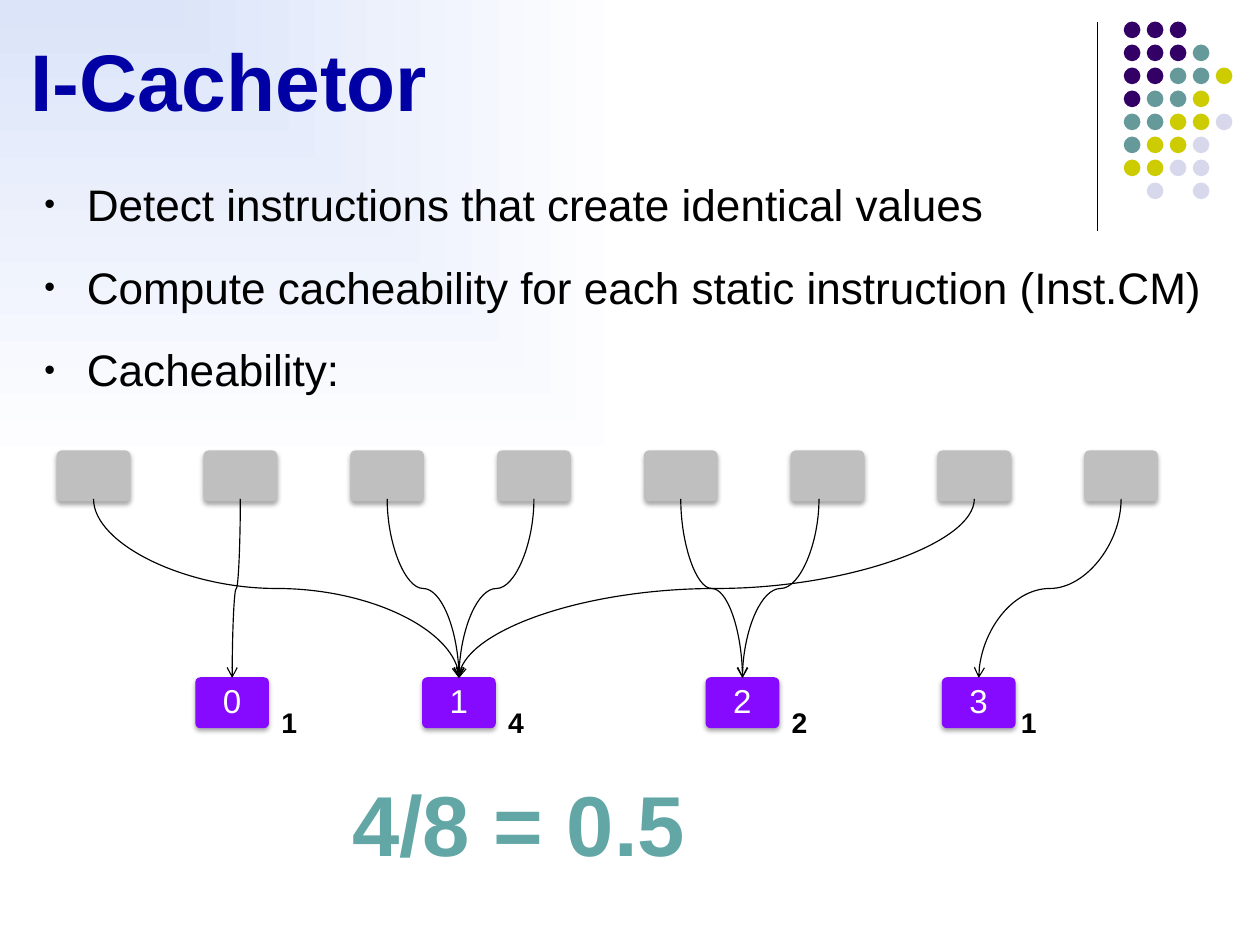
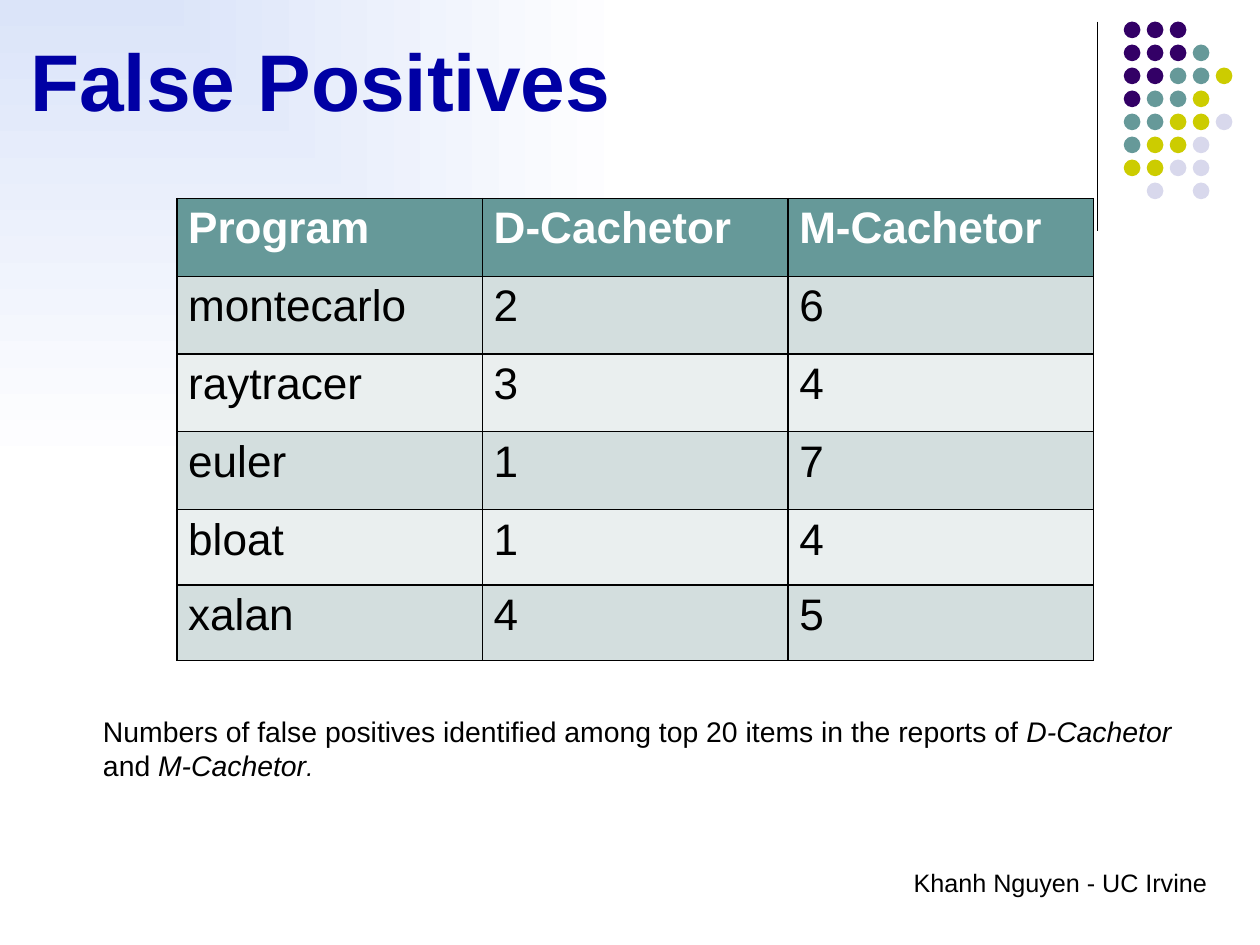
from typing import Any, NamedTuple

from pptx import Presentation
from pptx.dml.color import RGBColor as RGB
from pptx.enum.shapes import MSO_CONNECTOR as Conn, MSO_SHAPE as Kind
from pptx.enum.text import MSO_ANCHOR as Anchor, MSO_AUTO_SIZE as Fit, PP_ALIGN as Align
from pptx.oxml import parse_xml
from pptx.oxml.ns import nsdecls, qn
from pptx.util import Pt

FONT = "Arial"
BLACK = RGB(0x00, 0x00, 0x00)
WHITE = RGB(0xFF, 0xFF, 0xFF)
SKY = RGB(0xDB, 0xE4, 0xF9)
NAVY = RGB(0x00, 0x00, 0xA4)
PLUM = RGB(0x33, 0x00, 0x66)
TEAL = RGB(0x66, 0x99, 0x99)
LIME = RGB(0xCC, 0xCC, 0x00)
LILAC = RGB(0xD8, 0xD8, 0xEC)
VIOLET = RGB(0x85, 0x0A, 0xFF)
GREY = RGB(0xBF, 0xBF, 0xBF)
AQUA = RGB(0x62, 0xA6, 0xA6)
BANDS = (RGB(0xD3, 0xDE, 0xDE), RGB(0xEA, 0xEF, 0xEF))

DOTS = ("PPP..", "PPPT.", "PPTTY", "PTTY.", "TTYYL", "TYYL.", "YYLL.", ".L.L.")
INKS = {"P": PLUM, "T": TEAL, "Y": LIME, "L": LILAC}

BARE = dict(margin_left=0, margin_top=0, margin_right=0, margin_bottom=0,
            auto_size=Fit.NONE, vertical_anchor=Anchor.TOP, word_wrap=True)

BOX_W, BOX_H = 46.8, 32.4
TOP_X, TOP_Y, TOP_STEP = 36, 286, 93.2
SLOT_Y = 430
ARROW_Y = (316.8, 430.5)
TARGETS = (1, 0, 1, 1, 2, 2, 1, 3)
SHIFTS = {5: -5.4}


class Box(NamedTuple):
    x: float
    y: float
    w: float
    h: float

    def pts(self) -> tuple:
        return tuple(Pt(v) for v in self)


class Slot(NamedTuple):
    x: float
    count: str
    count_x: float


class Piece(NamedTuple):
    text: str
    extra: dict = {}


SLOTS = (Slot(124, "1", 166.3), Slot(268, "4", 310.3),
         Slot(448, "2", 490.3), Slot(598, "1", 635.8))

POINTS = (
    "Detect instructions that create identical values",
    "Compute cacheability for each static instruction (Inst.CM)",
    "Cacheability:",
)

ROWS = (
    ("Program", "D-Cachetor", "M-Cachetor"),
    ("montecarlo", "2", "6"),
    ("raytracer", "3", "4"),
    ("euler", "1", "7"),
    ("bloat", "1", "4"),
    ("xalan", "4", "5"),
)

NOTE = (
    Piece("Numbers of false positives identified among top 20 items in the reports of "),
    Piece("D-Cachetor ", {"italic": True}),
    Piece("and "),
    Piece("M-Cachetor", {"italic": True}),
    Piece(".", {"italic": True, "size": Pt(16)}),
)


def put(item: Any, **vals: Any) -> None:
    for key, val in vals.items():
        setattr(item, key, val)


def write(para: Any, pieces: tuple, size: float, ink: RGB = BLACK, **vals: Any) -> None:
    for piece in pieces:
        run = para.add_run()
        run.text = piece.text
        put(run.font, **{"name": FONT, "size": Pt(size), **vals, **piece.extra})
        run.font.color.rgb = ink


def label(slide: Any, box: Box, pieces: tuple, size: float,
          align: Align = Align.CENTER, **vals: Any) -> Any:
    frame = slide.shapes.add_textbox(*box.pts()).text_frame
    frame.word_wrap = True
    frame.paragraphs[0].alignment = align
    write(frame.paragraphs[0], pieces, size, **vals)
    return frame


def solid(shape: Any, ink: RGB) -> None:
    shape.shadow.inherit = False
    shape.fill.solid()
    shape.fill.fore_color.rgb = ink
    shape.line.fill.background()


def stroke(con: Any) -> Any:
    """Make a connector thin, black and flat; return its line element."""
    con.line.color.rgb = BLACK
    con.line.width = Pt(0.75)
    props = con.element.spPr
    props.append(parse_xml(f"<a:effectLst {nsdecls('a')}/>"))
    return props.find(qn("a:ln"))


def wash(master: Any) -> None:
    """Shade the background from the top left corner."""
    fill = master.background.fill
    fill.gradient()
    for stop, ink in zip(fill.gradient_stops, (SKY, WHITE)):
        stop.color.rgb = ink
    grad = next(master.element.iter(qn("a:gradFill")))
    grad.replace(grad.find(qn("a:lin")), parse_xml(
        f'<a:path {nsdecls("a")} path="rect">'
        '<a:fillToRect r="100000" b="100000"/></a:path>'))


def adorn(master: Any, slide: Any) -> None:
    """Group the rule and dots on a slide, then move them to the master."""
    group = slide.shapes.add_group_shape()
    stroke(group.shapes.add_connector(
        Conn.STRAIGHT, Pt(697), Pt(13.7), Pt(697), Pt(146.9)))
    for row, line in enumerate(DOTS):
        for col, code in enumerate(line):
            if code in INKS:
                spot = Box(713.5 + 14.6 * col, 13.7 + 14.6 * row, 10.6, 10.6)
                solid(group.shapes.add_shape(Kind.OVAL, *spot.pts()), INKS[code])
    for num, node in enumerate(group.element.iter(qn("p:cNvPr")), 100):
        node.set("id", str(num))
    master.element.cSld.spTree.insert(2, group.element)


def place(holder: Any, box: Box) -> Any:
    put(holder, **dict(zip(("left", "top", "width", "height"), box.pts())))
    put(holder.text_frame, **BARE)
    return holder.text_frame


def start(deck: Any, layout: int, title: str) -> Any:
    slide = deck.slides.add_slide(deck.slide_layouts[layout])
    para = place(slide.shapes.title, Box(19.2, 24, 761, 72)).paragraphs[0]
    put(para, alignment=Align.LEFT, line_spacing=0.95)
    write(para, (Piece(title),), 51, NAVY, bold=True)
    return slide


def bullets(slide: Any) -> None:
    frame = place(slide.placeholders[1], Box(19.2, 96, 761, 480))
    for num, text in enumerate(POINTS):
        para = frame.add_paragraph() if num else frame.paragraphs[0]
        put(para, level=1, line_spacing=1.5, space_before=Pt(2), space_after=Pt(0))
        props = para._p.get_or_add_pPr()
        props.set("marL", str(Pt(36)))
        props.set("indent", str(Pt(-27)))
        for bit in (f'<a:buClr {nsdecls("a")}><a:srgbClr val="{BLACK}"/></a:buClr>',
                    f'<a:buSzPct {nsdecls("a")} val="70000"/>',
                    f'<a:buFont {nsdecls("a")} typeface="{FONT}"/>',
                    f'<a:buChar {nsdecls("a")} char="•"/>'):
            props.append(parse_xml(bit))
        write(para, (Piece(text),), 28)


def tile(slide: Any, x: float, y: float, ink: RGB, text: str = "") -> None:
    """Draw a rounded box with a soft shadow below it."""
    shape = slide.shapes.add_shape(Kind.ROUNDED_RECTANGLE, *Box(x, y, BOX_W, BOX_H).pts())
    shape.adjustments[0] = 0.1
    solid(shape, ink)
    shape.element.spPr.find(qn("a:effectLst")).append(parse_xml(
        f'<a:outerShdw {nsdecls("a")} blurRad="{Pt(3.1)}" dist="{Pt(1.8)}" '
        'dir="5400000" rotWithShape="0"><a:srgbClr val="000000">'
        '<a:alpha val="35000"/></a:srgbClr></a:outerShdw>'))
    if text:
        frame = shape.text_frame
        put(frame, **{**BARE, "vertical_anchor": Anchor.MIDDLE})
        put(frame.paragraphs[0], alignment=Align.CENTER, line_spacing=0.9)
        write(frame.paragraphs[0], (Piece(text),), 21, WHITE)


def arrow(slide: Any, x1: float, x2: float) -> None:
    """Draw a curve that leaves and arrives vertically: a turned S-curve."""
    y1, y2 = ARROW_Y
    long, wide = y2 - y1, abs(x2 - x1)
    x, y = (x1 + x2 - long) / 2, (y1 + y2 - wide) / 2
    con = slide.shapes.add_connector(Conn.CURVE, Pt(x), Pt(y), Pt(x + long), Pt(y + wide))
    stroke(con).append(parse_xml(f'<a:tailEnd {nsdecls("a")} type="arrow"/>'))
    turn = con.element.spPr.find(qn("a:xfrm"))
    turn.set("rot", str((270 if x2 > x1 else 90) * 60000))
    if x2 > x1:
        turn.set("flipH", "1")


def graph(slide: Any) -> None:
    for num, slot in enumerate(SLOTS):
        tile(slide, slot.x, SLOT_Y, VIOLET, str(num))
    for num, goal in enumerate(TARGETS):
        x = TOP_X + TOP_STEP * num
        tile(slide, x, TOP_Y, GREY)
        arrow(slide, x + BOX_W / 2 + SHIFTS.get(num, 0), SLOTS[goal].x + BOX_W / 2)
    frame = label(slide, Box(215.3, 486, 228.2, 72.7), (Piece("4/8 = 0.5"),), 54,
                  ink=AQUA, bold=True)
    frame.word_wrap = False
    for slot in SLOTS:
        label(slide, Box(slot.count_x, 444.2, 34.6, 28.8), (Piece(slot.count),), 18, bold=True)


def edge(cell: Any) -> None:
    """Give a cell thin black borders, which come before its fill."""
    props = cell._tc.get_or_add_tcPr()
    for num, side in enumerate(("lnL", "lnR", "lnT", "lnB")):
        props.insert(num, parse_xml(
            f'<a:{side} {nsdecls("a")} w="{Pt(1)}"><a:solidFill>'
            f'<a:srgbClr val="{BLACK}"/></a:solidFill></a:{side}>'))


def grid(slide: Any) -> None:
    box = Box(112.3, 126, 582, 293.6)
    table = slide.shapes.add_table(len(ROWS), len(ROWS[0]), *box.pts()).table
    for col in table.columns:
        col.width = Pt(194)
    for num, texts in enumerate(ROWS):
        table.rows[num].height = Pt(49.4 if num < 4 else 48)
        head = num == 0
        for col, text in enumerate(texts):
            cell = table.cell(num, col)
            cell.fill.solid()
            cell.fill.fore_color.rgb = TEAL if head else BANDS[(num - 1) % 2]
            edge(cell)
            write(cell.text_frame.paragraphs[0], (Piece(text),), 28,
                  WHITE if head else BLACK, bold=head)


def main() -> None:
    deck = Presentation()
    put(deck, slide_width=Pt(800), slide_height=Pt(600))
    wash(deck.slide_master)

    slide = start(deck, 1, "I-Cachetor")
    adorn(deck.slide_master, slide)
    bullets(slide)
    graph(slide)

    slide = start(deck, 5, "False Positives")
    foot = label(slide, Box(546.5, 546.5, 253.5, 40.3), (Piece("Khanh Nguyen - UC Irvine"),), 16)
    put(foot, margin_left=Pt(8), margin_right=Pt(8), margin_top=Pt(4), margin_bottom=Pt(4))
    grid(slide)
    label(slide, Box(58.3, 450, 702, 51), NOTE, 18, Align.LEFT)

    deck.save("out.pptx")


if __name__ == "__main__":
    main()
